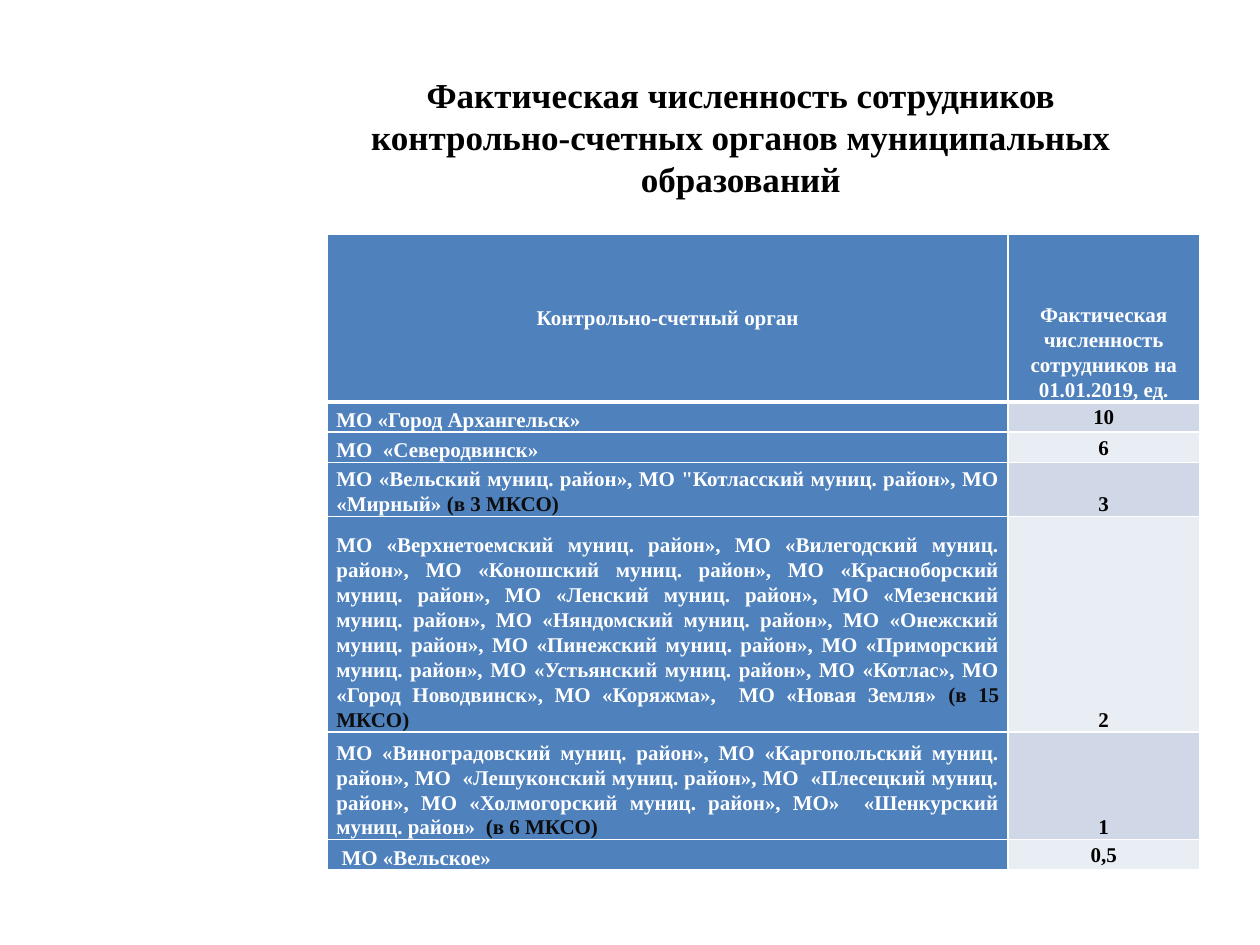
from lxml import etree
from pptx import Presentation
from pptx.dml.color import RGBColor
from pptx.enum.text import MSO_ANCHOR as Anchor, PP_ALIGN as Align
from pptx.oxml.ns import qn
from pptx.util import Inches, Pt

COLORS = {
    "text": "000000",
    "note": "0D0D0D",
    "white": "FFFFFF",
    "head": "4F81BD",
    "odd": "D0D8E8",
    "even": "E9EDF4",
}
FONT = "Times New Roman"
TITLE = "Фактическая численность сотрудников контрольно-счетных органов муниципальных образований"
HEADINGS = [
    ("Контрольно-счетный орган", Anchor.MIDDLE),
    ("Фактическая численность сотрудников на 01.01.2019, ед.", Anchor.BOTTOM),
]
COLUMN_WIDTHS = [5.4, 1.52]
HEADER_HEIGHT = 1.33
# Bodies, note on how many bodies the row covers, staff count, row height
ROWS = [
    ("МО «Город Архангельск»", "", "10", 0.24),
    ("МО  «Северодвинск»", "", "6", 0.24),
    ("МО «Вельский муниц. район», МО \"Котласский муниц. район», МО «Мирный» ",
     "(в 3 МКСО)", "3", 0.42),
    ("МО «Верхнетоемский муниц. район», МО «Вилегодский муниц. район», "
     "МО «Коношский муниц. район», МО «Красноборский муниц. район», "
     "МО «Ленский муниц. район», МО «Мезенский муниц. район», "
     "МО «Няндомский муниц. район», МО «Онежский муниц. район», "
     "МО «Пинежский муниц. район», МО «Приморский муниц. район», "
     "МО «Устьянский муниц. район», МО «Котлас», МО «Город Новодвинск», "
     "МО «Коряжма»,  МО «Новая Земля» ",
     "(в 15 МКСО)", "2", 1.59),
    ("МО «Виноградовский муниц. район», МО «Каргопольский муниц. район», "
     "МО  «Лешуконский муниц. район», МО  «Плесецкий муниц. район», "
     "МО «Холмогорский муниц. район», МО»  «Шенкурский муниц. район»  ",
     "(в 6 МКСО)", "1", 0.71),
    (" МО «Вельское»", "", "0,5", 0.24),
]


def rgb(name):
    return RGBColor.from_string(COLORS[name])


def add_span(para, text, size, color):
    span = para.add_run()
    span.text = text
    for key, value in {"name": FONT, "size": Pt(size), "bold": True}.items():
        setattr(span.font, key, value)
    span.font.color.rgb = rgb(color)


def add_title(page, left, top, width, height):
    box = page.shapes.add_textbox(Inches(left), Inches(top), Inches(width), Inches(height))
    frame = box.text_frame
    frame.word_wrap = True
    frame.vertical_anchor = Anchor.MIDDLE
    para = frame.paragraphs[0]
    para.alignment = Align.CENTER
    add_span(para, TITLE, 20, "text")


def set_borders(cell, widths):
    """Draw white borders; widths are points for left, right, top and bottom."""
    properties = cell._tc.get_or_add_tcPr()
    for index, (side, width) in enumerate(zip(("lnL", "lnR", "lnT", "lnB"), widths)):
        line = etree.Element(qn(f"a:{side}"), w=str(Pt(width)))
        fill = etree.SubElement(line, qn("a:solidFill"))
        etree.SubElement(fill, qn("a:srgbClr"), val=COLORS["white"])
        properties.insert(index, line)


def fill_cell(cell, spans, fill, anchor, align, borders):
    margins = {"margin_left": Inches(0.07), "margin_right": Inches(0.07),
               "margin_top": 0, "margin_bottom": 0}
    for key, value in {**margins, "vertical_anchor": anchor}.items():
        setattr(cell, key, value)
    cell.fill.solid()
    cell.fill.fore_color.rgb = rgb(fill)
    set_borders(cell, borders)
    para = cell.text_frame.paragraphs[0]
    para.alignment = align
    para.line_spacing = 1.07
    for text, color in spans:
        if text:
            add_span(para, text, 12, color)


def add_staff_table(page, left, top):
    heights = [HEADER_HEIGHT] + [row[-1] for row in ROWS]
    table = page.shapes.add_table(
        len(heights), len(COLUMN_WIDTHS), Inches(left), Inches(top),
        Inches(sum(COLUMN_WIDTHS)), Inches(sum(heights))).table
    for column, width in zip(table.columns, COLUMN_WIDTHS):
        column.width = Inches(width)
    for row, height in zip(table.rows, heights):
        row.height = Inches(height)

    for index, (heading, anchor) in enumerate(HEADINGS):
        fill_cell(table.cell(0, index), [(heading, "white")], "head", anchor,
                  Align.CENTER, (1, 1, 1, 3))
    for index, (bodies, note, count, _) in enumerate(ROWS, start=1):
        borders = (1, 1, 3 if index == 1 else 1, 1)
        align = Align.LEFT if index == len(ROWS) else Align.JUSTIFY
        fill_cell(table.cell(index, 0), [(bodies, "white"), (note, "note")],
                  "head", Anchor.BOTTOM, align, borders)
        fill_cell(table.cell(index, 1), [(count, "text")],
                  "odd" if index % 2 else "even",
                  Anchor.BOTTOM if note else Anchor.MIDDLE, Align.CENTER, borders)


def main():
    deck = Presentation()
    deck.slide_width, deck.slide_height = Inches(10), Inches(7.5)
    page = deck.slides.add_slide(deck.slide_layouts[6])
    add_title(page, 2.71, 0.35, 6.34, 1.47)
    add_staff_table(page, 2.6, 1.86)
    deck.save("out.pptx")


if __name__ == "__main__":
    main()
